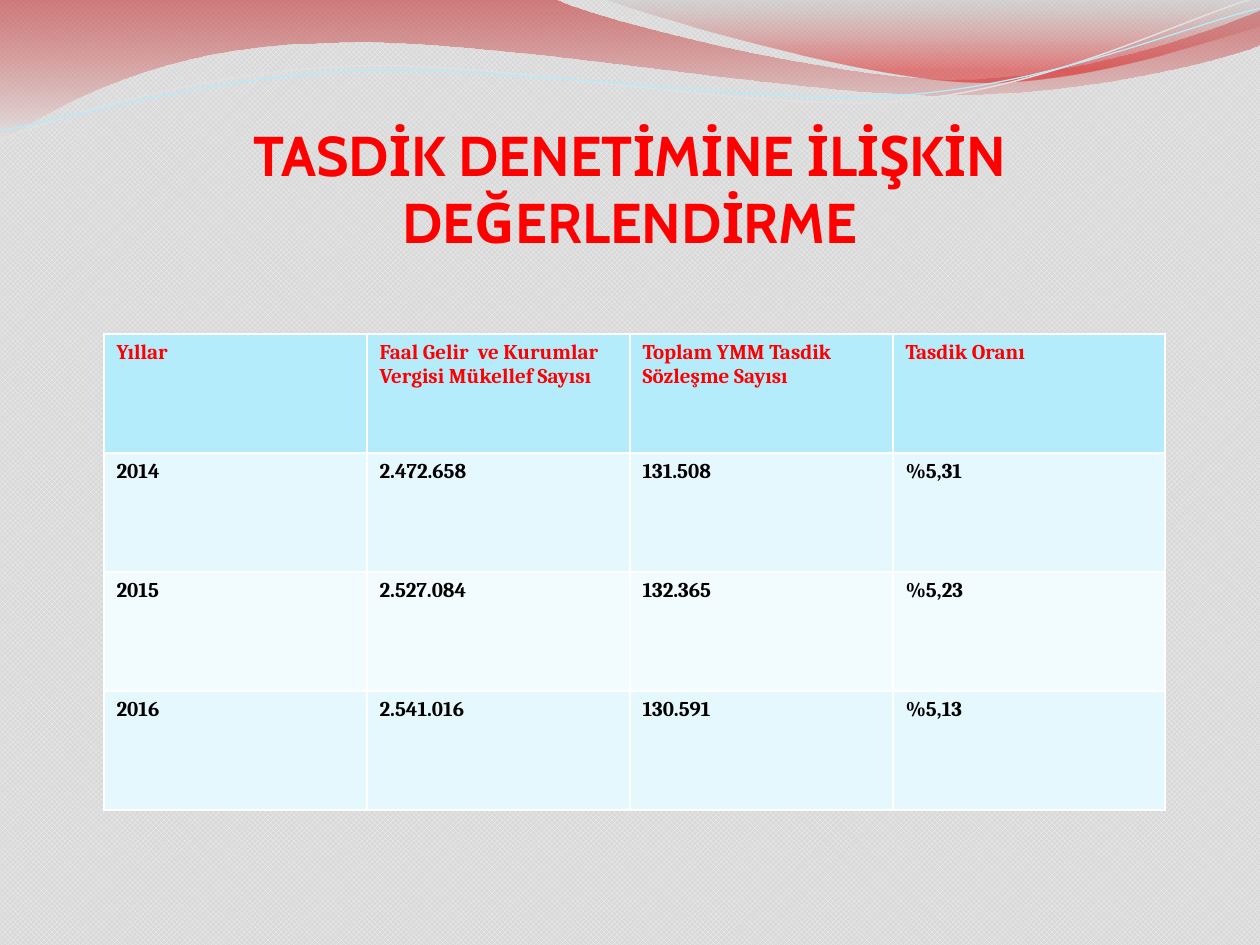
from lxml.etree import SubElement
from pptx import Presentation
from pptx.dml.color import RGBColor
from pptx.enum.dml import MSO_PATTERN
from pptx.enum.text import MSO_ANCHOR, MSO_AUTO_SIZE, PP_ALIGN
from pptx.oxml.ns import qn
from pptx.util import Pt

SCALE = 914400 / 126
color = RGBColor.from_string


def write(frame, text, font="Cambria", size=12, fill="000000", align=PP_ALIGN.LEFT):
    para = frame.paragraphs[0]
    para.alignment = align
    span = para.add_run()
    span.text = text
    span.font.name = font
    span.font.size = Pt(size)
    span.font.bold = True
    span.font.color.rgb = color(fill)


def trace(start, segments, close):
    points = [pair for segment in segments for pair in zip(segment[::2], segment[1::2])]
    builder = page.shapes.build_freeform(*start, scale=SCALE)
    builder.add_line_segments(points, close=close)
    shape = builder.convert_to_shape()
    shape.shadow.inherit = False
    steps = iter(list(shape.element.iter(qn("a:lnTo"))))
    for segment in segments:
        corners = [next(steps) for _ in segment[::2]]
        if len(corners) == 3:
            bend = SubElement(corners[0].getparent(), qn("a:cubicBezTo"))
            corners[0].addprevious(bend)
            for corner in corners:
                bend.append(corner[0])
                corner.getparent().remove(corner)
    return shape


deck = Presentation()
deck.slide_width = round(1260 * SCALE)
deck.slide_height = round(945 * SCALE)
page = deck.slides.add_slide(deck.slide_layouts[5])

backdrop = page.background.fill
backdrop.patterned()
backdrop.pattern = MSO_PATTERN.TRELLIS
backdrop.fore_color.rgb = color("F2F2F2")
backdrop.back_color.rgb = color("D9D9D9")

waves = [
    ((0, 0),
     [(554, -1), (600, 21, 837, 79, 955, 79), (1075, 79, 1207, 33, 1260, 11), (1261, 45),
      (1238, 55, 1096, 96, 940, 95), (784, 95, 481, 35, 324, 43), (163, 45, 58, 105, -1, 142)],
     [(0, "BD0000", 45), (1, "E7E7E7", 55)]),
    ((604, -1),
     [(641, 14, 859, 78, 969, 82), (1079, 87, 1211, 40, 1260, 26), (1260, 0)],
     [(0, "BDBDBD", 30), (0.8, "E10000", 45)]),
]
for start, segments, stops in waves:
    wave = trace(start, segments, close=True)
    wave.line.fill.background()
    wave.fill.gradient()
    wave.fill.gradient_angle = 270
    for stop, (position, shade, opacity) in zip(wave.fill.gradient_stops, stops):
        stop.position = position
        stop.color.rgb = color(shade)
    tints = wave.element.spPr.iter(qn("a:srgbClr"))
    for tint, (position, shade, opacity) in zip(list(tints), stops):
        SubElement(tint, qn("a:alpha"), val=str(opacity * 1000))

curves = [
    ((-2, 110), [(58, 90, 199, 52, 350, 53), (499, 53, 745, 118, 896, 114),
                 (1049, 109, 1184, 45, 1260, 27)], "E1E1E1", 0.85),
    ((-2, 101), [(57, 94, 207, 57, 357, 58), (509, 58, 750, 112, 902, 108),
                 (1052, 104, 1188, 52, 1262, 38)], "B4ECFC", 0.75),
]
for start, segments, shade, width in curves:
    curve = trace(start, segments, close=False)
    curve.rotation = 357.3
    curve.fill.background()
    curve.line.color.rgb = color(shade)
    curve.line.width = Pt(width)

title = page.shapes.title
title.left, title.top, title.width, title.height = [round(v * SCALE) for v in (63, 97, 1134, 158)]
frame = title.text_frame
frame.word_wrap = True
frame.auto_size = MSO_AUTO_SIZE.NONE
frame.vertical_anchor = MSO_ANCHOR.BOTTOM
frame.margin_left = frame.margin_right = frame.margin_bottom = 0
frame.margin_top = round(6 * SCALE)
write(frame, "TASDİK DENETİMİNE İLİŞKİN DEĞERLENDİRME",
      font="Cabin", size=32, fill="FF0000", align=PP_ALIGN.CENTER)

rows = [
    ["Yıllar", "Faal Gelir  ve Kurumlar Vergisi Mükellef Sayısı",
     "Toplam YMM Tasdik Sözleşme Sayısı", "Tasdik Oranı"],
    ["2014", "2.472.658", "131.508", "%5,31"],
    ["2015", "2.527.084", "132.365", "%5,23"],
    ["2016", "2.541.016", "130.591", "%5,13"],
]
row_fills = ["B4ECFC", "E5F8FE", "F2FBFE", "E5F8FE"]
widths = [263, 263, 263, 272]
left, top, width, height = [round(v * SCALE) for v in (104, 334, sum(widths), 4 * 119)]
table = page.shapes.add_table(len(rows), len(widths), left, top, width, height).table
for column, width in zip(table.columns, widths):
    column.width = round(width * SCALE)

for r, values in enumerate(rows):
    table.rows[r].height = round(119 * SCALE)
    for c, value in enumerate(values):
        cell = table.cell(r, c)
        write(cell.text_frame, value, fill="000000" if r else "FF0000")
        cell.fill.solid()
        cell.fill.fore_color.rgb = color(row_fills[r])

deck.save("out.pptx")
